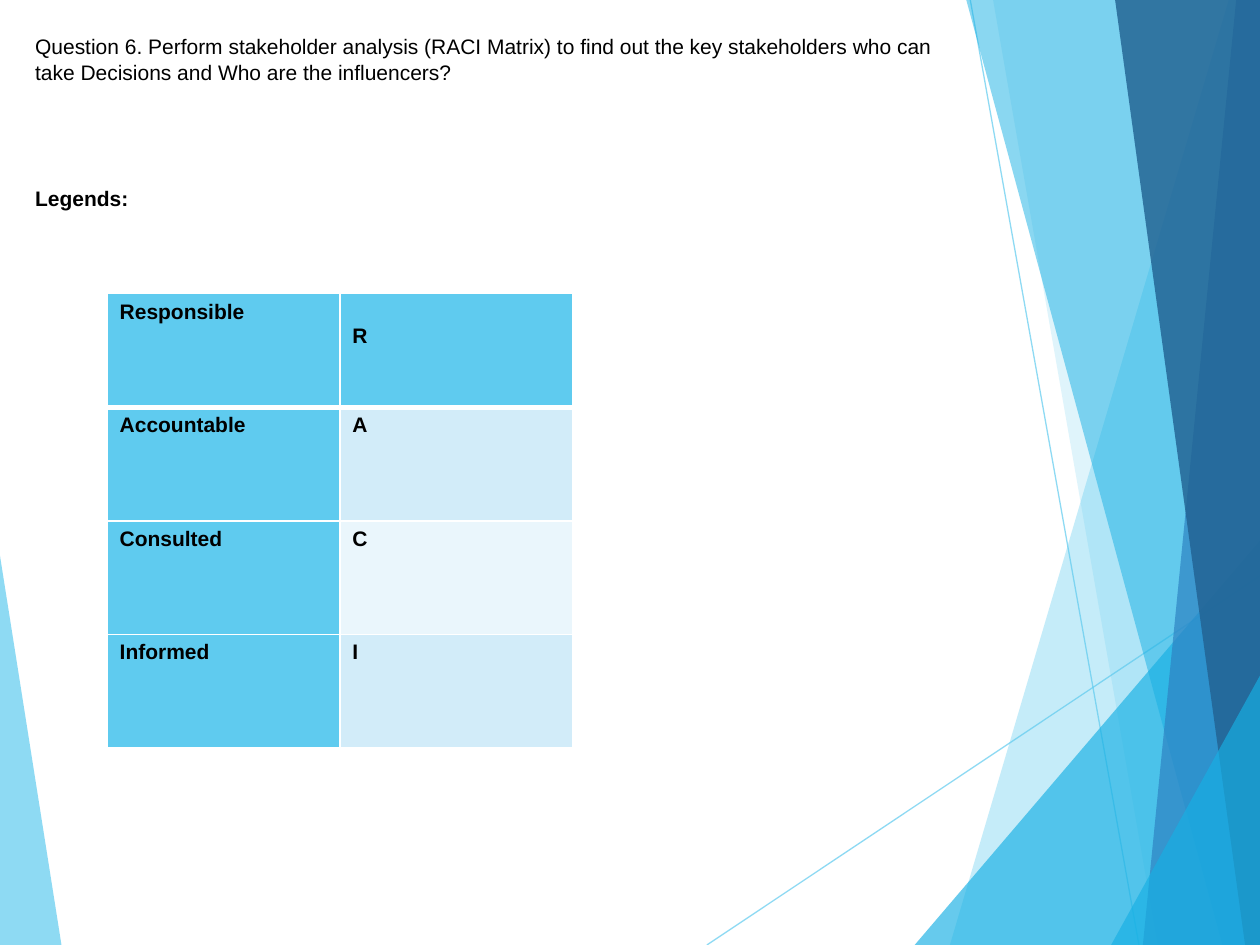
from lxml import etree
from pptx import Presentation
from pptx.dml.color import RGBColor
from pptx.enum.shapes import MSO_CONNECTOR
from pptx.oxml.ns import qn
from pptx.util import Cm, Pt

STRAIGHT = MSO_CONNECTOR.STRAIGHT
BLACK = RGBColor(0x00, 0x00, 0x00)
WHITE = RGBColor(0xFF, 0xFF, 0xFF)
SKY = RGBColor(0x5F, 0xCB, 0xEF)
CYAN = RGBColor(0x17, 0xB0, 0xE4)
BLUE = RGBColor(0x2E, 0x83, 0xC3)
NAVY = RGBColor(0x22, 0x62, 0x92)
PALE = RGBColor(0xD2, 0xEC, 0xF9)
FAINT = RGBColor(0xEA, 0xF6, 0xFC)
WIDE, HIGH = 25.4, 19.05

LEGENDS = [
    ("Responsible", "R", SKY),
    ("Accountable", "A", PALE),
    ("Consulted", "C", FAINT),
    ("Informed", "I", PALE),
]


def fade(shape, percent):
    color = next(shape._element.spPr.iter(qn("a:srgbClr")))
    etree.SubElement(color, qn("a:alpha"), val=str(percent * 1000))


def add_facet(slide, points, color, percent):
    spots = [(Cm(x), Cm(y)) for x, y in points]
    pen = slide.shapes.build_freeform(*spots[0], scale=1.0)
    pen.add_line_segments(spots[1:], close=True)
    shape = pen.convert_to_shape()
    shape.shadow.inherit = False
    shape.fill.solid()
    shape.fill.fore_color.rgb = color
    shape.line.fill.background()
    fade(shape, percent)


def add_band(slide, top, base, color, percent):
    points = [(top, 0), (base, HIGH), (WIDE, HIGH), (WIDE, 0)]
    add_facet(slide, points, color, percent)


def add_wedge(slide, base, top, color, percent):
    points = [(base, HIGH), (WIDE, top), (WIDE, HIGH)]
    add_facet(slide, points, color, percent)


def add_ray(slide, *ends):
    ray = slide.shapes.add_connector(STRAIGHT, *[Cm(end) for end in ends])
    ray.line.color.rgb = SKY
    ray.line.width = Pt(0.75)
    fade(ray, 70)
    etree.SubElement(ray._element.spPr, qn("a:effectLst"))


def write(para, text, size=12, bold=False, color=BLACK, before=0):
    para.space_before = Pt(before)
    run = para.add_run()
    run.text = text
    run.font.name = "Arial"
    run.font.size = Pt(size)
    run.font.bold = bold
    run.font.color.rgb = color


def add_edges(cell, top, base):
    props = cell._tc.get_or_add_tcPr()
    sides = [("L", 1), ("R", 1), ("T", top), ("B", base)]
    for place, (side, width) in enumerate(sides):
        edge = etree.Element(qn(f"a:ln{side}"), w=str(Pt(width)))
        fill = etree.SubElement(edge, qn("a:solidFill"))
        etree.SubElement(fill, qn("a:srgbClr"), val=str(WHITE))
        props.insert(place, edge)


def add_facets(slide):
    add_facet(slide, [(0, 11.2), (1.24, HIGH), (0, HIGH)], SKY, 70)
    add_ray(slide, 14.25, HIGH, WIDE, 11.61)
    add_ray(slide, 19.56, 0, 22.96, HIGH)
    add_band(slide, 24.77, 19.15, SKY, 36)
    add_band(slide, 20.02, 23.34, SKY, 20)
    add_wedge(slide, 18.44, 10.9, CYAN, 66)
    add_band(slide, 19.48, 24.64, CYAN, 50)
    add_band(slide, 24.92, 23.04, BLUE, 70)
    add_band(slide, 22.48, 25.1, NAVY, 82)
    add_wedge(slide, 22.4, 13.62, CYAN, 66)


def add_prompt(slide):
    box = slide.shapes.add_textbox(Cm(0.46), Cm(0.56), Cm(18.77), Cm(3.84))
    frame = box.text_frame
    frame.word_wrap = True
    write(frame.paragraphs[0],
          "Question 6. Perform stakeholder analysis (RACI Matrix) to find out "
          "the key stakeholders who can take Decisions and Who are the "
          "influencers?")
    write(frame.add_paragraph(), "Legends:", bold=True, before=58)


def add_matrix(slide):
    frame = slide.shapes.add_table(len(LEGENDS), 2, Cm(2.16), Cm(5.92),
                                   Cm(9.38), Cm(9.16))
    table = frame.table
    for row, (role, code, tint) in enumerate(LEGENDS):
        for col, (text, color) in enumerate([(role, SKY), (code, tint)]):
            cell = table.cell(row, col)
            add_edges(cell, 3 if row == 1 else 1, 3 if row == 0 else 1)
            cell.fill.solid()
            cell.fill.fore_color.rgb = color
            write(cell.text_frame.paragraphs[0], text, bold=True)
    table.cell(0, 1).margin_top = Cm(0.62)


def main():
    deck = Presentation()
    deck.slide_width, deck.slide_height = Cm(WIDE), Cm(HIGH)
    slide = deck.slides.add_slide(deck.slide_layouts[6])
    add_facets(slide)
    add_prompt(slide)
    add_matrix(slide)
    deck.save("out.pptx")


if __name__ == "__main__":
    main()
